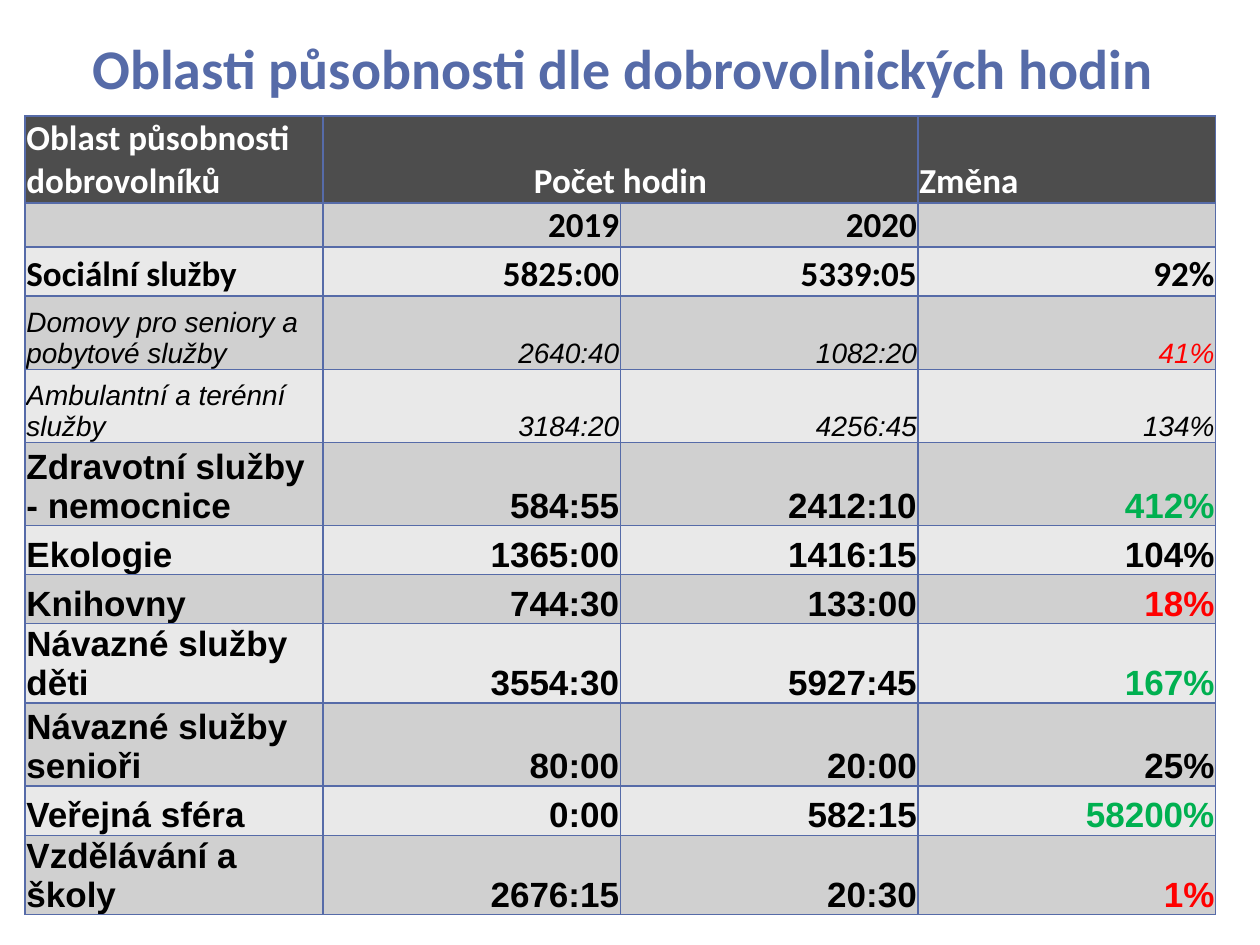
from dataclasses import dataclass

from lxml import etree
from pptx import Presentation
from pptx.dml.color import RGBColor
from pptx.enum.text import MSO_ANCHOR, PP_ALIGN
from pptx.oxml.ns import qn
from pptx.util import Inches, Pt

LEFT, CENTER, RIGHT = PP_ALIGN.LEFT, PP_ALIGN.CENTER, PP_ALIGN.RIGHT
MIDDLE, BOTTOM = MSO_ANCHOR.MIDDLE, MSO_ANCHOR.BOTTOM
TITLE_ONLY = 5


@dataclass(frozen=True)
class Theme:
    accent: str = "566BA8"
    header_fill: str = "4D4D4D"
    dark_band: str = "D0D0D0"
    light_band: str = "E9E9E9"
    white: str = "FFFFFF"
    black: str = "000000"
    decrease: str = "FF0000"
    increase: str = "00B050"
    heading_font: str = "Calibri"
    body_font: str = "Arial"
    title_size: int = 32
    text_size: int = 20
    detail_size: int = 16
    border_width: int = 1


THEME = Theme()


@dataclass(frozen=True)
class TextStyle:
    font: str
    size: int
    color: str = THEME.black
    bold: bool = True
    italic: bool = False


TITLE = TextStyle(THEME.heading_font, THEME.title_size, THEME.accent)
HEADER = TextStyle(THEME.heading_font, THEME.text_size, THEME.white)
GROUP = TextStyle(THEME.heading_font, THEME.text_size)
AREA = TextStyle(THEME.body_font, THEME.text_size)
DETAIL = TextStyle(THEME.body_font, THEME.detail_size, bold=False, italic=True)

ROWS = [
    (0.66, HEADER, ("Oblast působnosti dobrovolníků", "Počet hodin", "", "Změna")),
    (0.27, GROUP, ("", "2019", "2020", "")),
    (0.39, GROUP, ("Sociální služby", "5825:00", "5339:05", "92%")),
    (0.58, DETAIL, ("Domovy pro seniory a pobytové služby", "2640:40", "1082:20", "41%")),
    (0.58, DETAIL, ("Ambulantní a terénní služby", "3184:20", "4256:45", "134%")),
    (0.66, AREA, ("Zdravotní služby - nemocnice", "584:55", "2412:10", "412%")),
    (0.39, AREA, ("Ekologie", "1365:00", "1416:15", "104%")),
    (0.39, AREA, ("Knihovny", "744:30", "133:00", "18%")),
    (0.62, AREA, ("Návazné služby děti", "3554:30", "5927:45", "167%")),
    (0.66, AREA, ("Návazné služby senioři", "80:00", "20:00", "25%")),
    (0.39, AREA, ("Veřejná sféra", "0:00", "582:15", "58200%")),
    (0.39, AREA, ("Vzdělávání a školy", "2676:15", "20:30", "1%")),
]
HIGHLIGHTS = {
    "41%": THEME.decrease,
    "18%": THEME.decrease,
    "1%": THEME.decrease,
    "412%": THEME.increase,
    "167%": THEME.increase,
    "58200%": THEME.increase,
}
HEADER_ALIGNMENTS = (LEFT, CENTER, CENTER, LEFT)
BODY_ALIGNMENTS = (LEFT, RIGHT, RIGHT, RIGHT)


def write_text(paragraph, text, style, alignment, color=None):
    paragraph.alignment = alignment
    run = paragraph.add_run()
    run.text = text
    font = run.font
    font.name = style.font
    font.size = Pt(style.size)
    font.bold = style.bold
    font.italic = style.italic
    font.color.rgb = RGBColor.from_string(color or style.color)


def add_borders(cell):
    properties = cell._tc.get_or_add_tcPr()
    for index, side in enumerate(("lnL", "lnR", "lnT", "lnB")):
        line = etree.Element(qn(f"a:{side}"), w=str(Pt(THEME.border_width)))
        fill = etree.SubElement(line, qn("a:solidFill"))
        etree.SubElement(fill, qn("a:srgbClr"), val=THEME.accent)
        properties.insert(index, line)


def format_cell(cell, fill_color):
    cell.margin_left = cell.margin_right = cell.margin_top = Inches(0.01)
    cell.margin_bottom = 0
    cell.vertical_anchor = BOTTOM
    cell.fill.solid()
    cell.fill.fore_color.rgb = RGBColor.from_string(fill_color)
    add_borders(cell)


def band_color(row_index):
    if row_index == 0:
        return THEME.header_fill
    return THEME.dark_band if row_index % 2 else THEME.light_band


def build_title(slide, left, top, width, height):
    title = slide.shapes.title
    title.left, title.top, title.width, title.height = left, top, width, height
    frame = title.text_frame
    frame.vertical_anchor = MIDDLE
    write_text(frame.paragraphs[0], "Oblasti působnosti dle dobrovolnických hodin ", TITLE, CENTER)


def build_hours_table(slide, left, top, width, height):
    column_count = len(BODY_ALIGNMENTS)
    table = slide.shapes.add_table(len(ROWS), column_count, left, top, width, height).table
    for column in table.columns:
        column.width = width // column_count
    table.cell(0, 1).merge(table.cell(0, 2))
    for row_index, (row_height, style, texts) in enumerate(ROWS):
        table.rows[row_index].height = Inches(row_height)
        alignments = BODY_ALIGNMENTS if row_index else HEADER_ALIGNMENTS
        for column_index, (text, alignment) in enumerate(zip(texts, alignments)):
            cell = table.cell(row_index, column_index)
            format_cell(cell, band_color(row_index))
            if text:
                paragraph = cell.text_frame.paragraphs[0]
                write_text(paragraph, text, style, alignment, HIGHLIGHTS.get(text))


def main():
    presentation = Presentation()
    presentation.slide_width = Inches(10)
    presentation.slide_height = Inches(7.5)
    slide = presentation.slides.add_slide(presentation.slide_layouts[TITLE_ONLY])
    build_title(slide, Inches(0.5), Inches(0), Inches(8.99), Inches(1.07))
    build_hours_table(slide, Inches(0.2), Inches(0.92), Inches(9.45), Inches(6.06))
    presentation.save("out.pptx")


if __name__ == "__main__":
    main()
